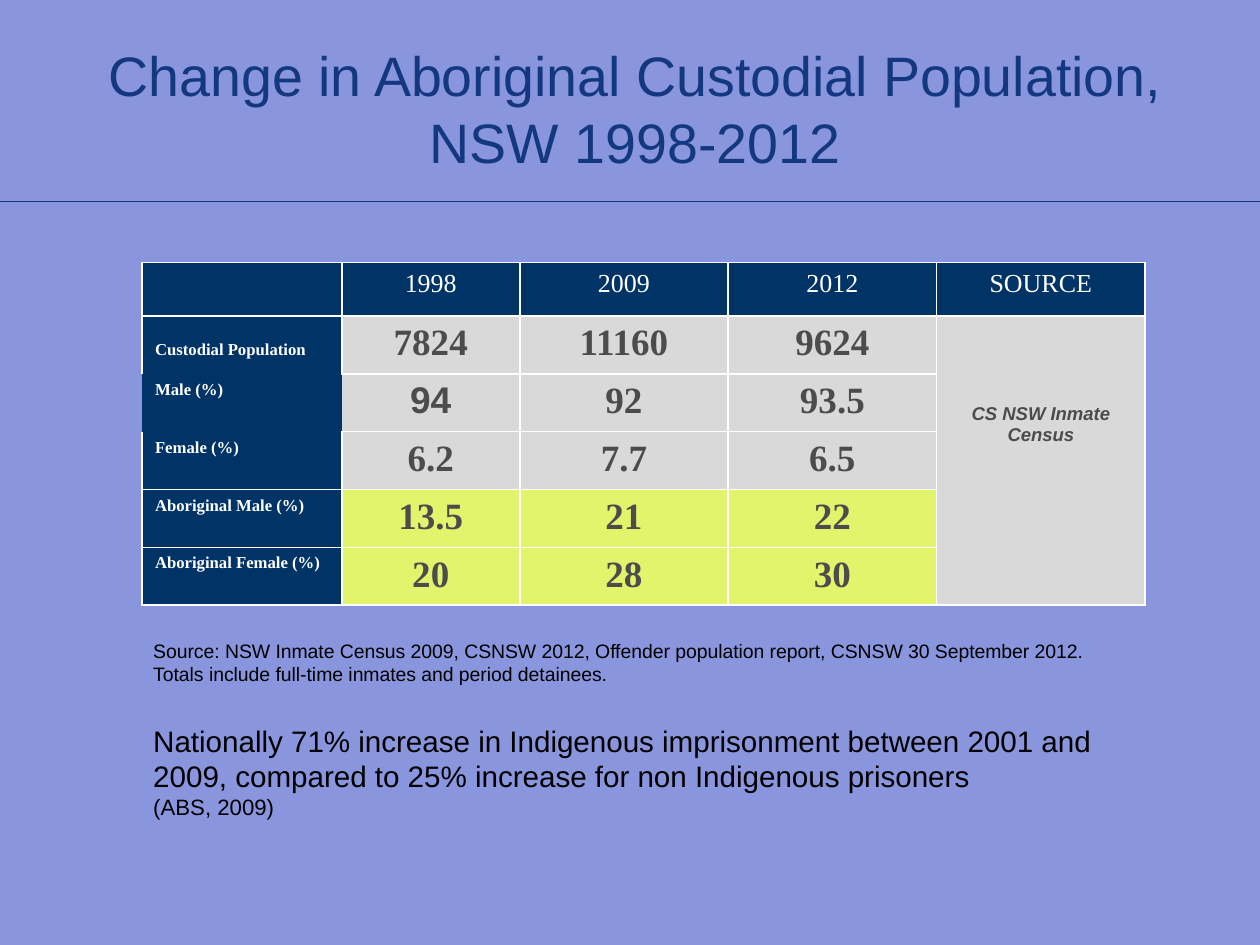
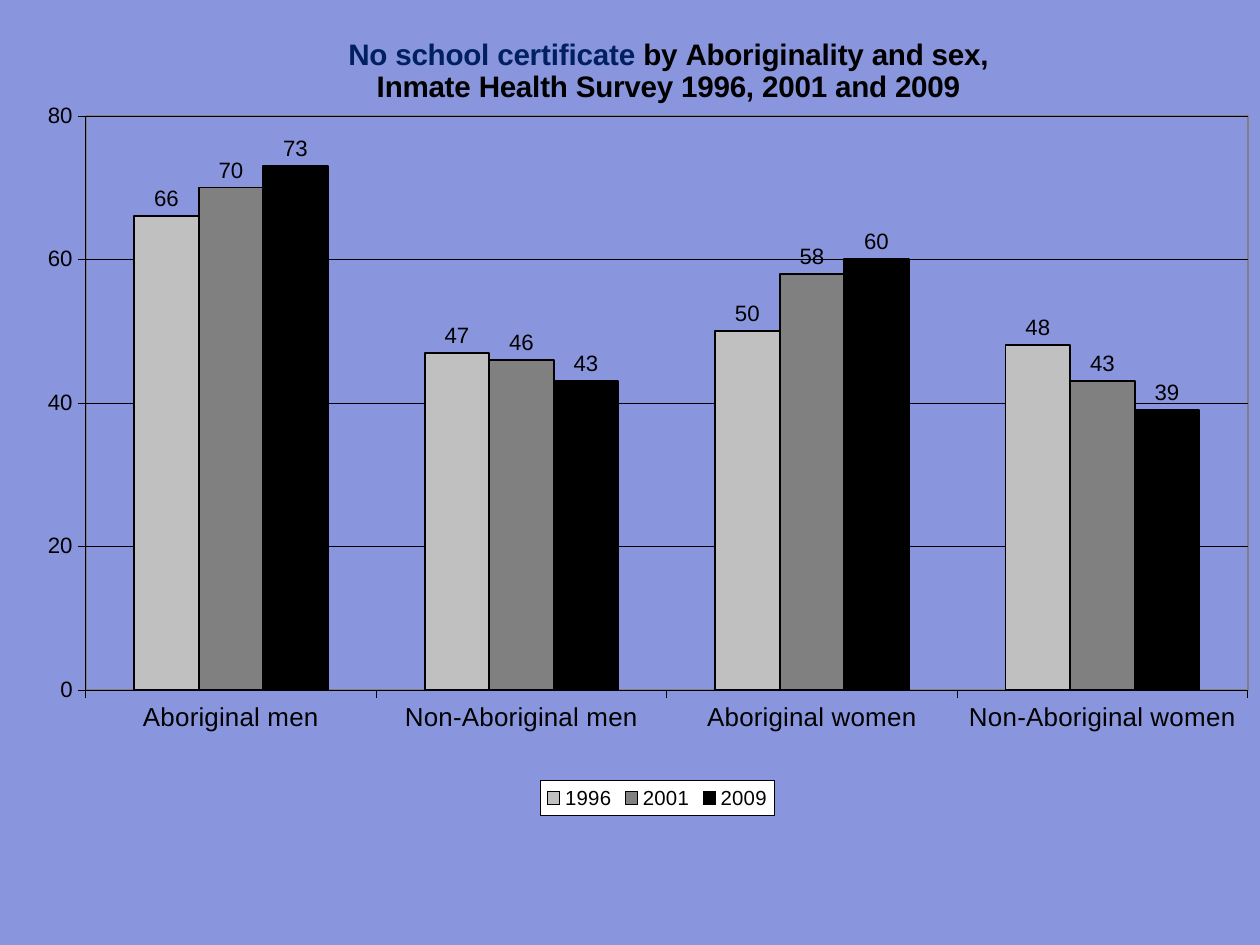
"""Build two slides on Aboriginal custody and schooling figures in NSW."""
from dataclasses import dataclass

from lxml.etree import SubElement
from pptx import Presentation
from pptx.chart.data import CategoryChartData
from pptx.dml.color import RGBColor
from pptx.enum.chart import XL_CHART_TYPE as ChartType
from pptx.enum.chart import XL_LABEL_POSITION as LabelPosition
from pptx.enum.chart import XL_LEGEND_POSITION as LegendPosition
from pptx.enum.chart import XL_TICK_MARK as TickMark
from pptx.enum.shapes import MSO_CONNECTOR as Connector
from pptx.enum.text import MSO_ANCHOR as Anchor
from pptx.enum.text import PP_ALIGN as Align
from pptx.oxml import parse_xml
from pptx.oxml.ns import nsdecls, qn
from pptx.util import Cm, Pt


@dataclass(frozen=True)
class Theme:
    """Colours, fonts and type sizes of the deck."""
    background: RGBColor = RGBColor(0x89, 0x96, 0xDE)
    title: RGBColor = RGBColor(0x13, 0x38, 0x80)
    accent: RGBColor = RGBColor(0x00, 0x20, 0x60)
    header: RGBColor = RGBColor(0x00, 0x33, 0x66)
    cell: RGBColor = RGBColor(0xD9, 0xD9, 0xD9)
    highlight: RGBColor = RGBColor(0xE1, 0xF4, 0x6C)
    figure: RGBColor = RGBColor(0x4C, 0x4C, 0x4C)
    silver: RGBColor = RGBColor(0xC0, 0xC0, 0xC0)
    grey: RGBColor = RGBColor(0x80, 0x80, 0x80)
    black: RGBColor = RGBColor(0, 0, 0)
    white: RGBColor = RGBColor(0xFF, 0xFF, 0xFF)
    sans: str = "Arial"
    serif: str = "Times New Roman"
    title_size: float = 30
    figure_size: float = 20
    lead_size: float = 16
    head_size: float = 14
    chart_size: float = 12
    legend_size: float = 11
    note_size: float = 10.5
    source_size: float = 10
    label_size: float = 9


class SlideBuilder:
    """Hold the theme and the current slide."""

    def __init__(self, deck, theme):
        """Paint the shared background on the master."""
        self.deck = deck
        self.theme = theme
        self.page = None
        fill = deck.slide_master.background.fill
        fill.solid()
        fill.fore_color.rgb = theme.background

    def new_page(self):
        """Start a blank slide."""
        self.page = self.deck.slides.add_slide(self.deck.slide_layouts[6])

    def style(self, font, size, color, name=None, bold=False, italic=False):
        """Set every property of a font."""
        font.name = name or self.theme.sans
        font.size = Pt(size)
        font.color.rgb = color
        font.bold = bold
        font.italic = italic

    def span(self, para, text, size, color, **look):
        """Add one styled run."""
        span = para.add_run()
        span.text = text
        self.style(span.font, size, color, **look)

    def text(self, place, lines, color, align=Align.LEFT, anchor=Anchor.TOP):
        """Add a text box from (text, size) lines."""
        frame = self.page.shapes.add_textbox(*map(Cm, place)).text_frame
        frame.word_wrap = True
        frame.vertical_anchor = anchor
        for index, (words, size) in enumerate(lines):
            para = frame.add_paragraph() if index else frame.paragraphs[0]
            para.alignment = align
            self.span(para, words, size, color)

    def rule(self, top):
        """Draw a thin line across the slide."""
        line = self.page.shapes.add_connector(
            Connector.STRAIGHT, 0, Cm(top), self.deck.slide_width, Cm(top))
        line.line.color.rgb = self.theme.title
        line.line.width = Pt(0.75)
        SubElement(line.element.xpath("p:spPr")[0], qn("a:effectLst"))

    def table(self, left, top, widths, heights):
        """Add a plain table of the given column and row sizes."""
        table = self.page.shapes.add_table(
            len(heights), len(widths), Cm(left), Cm(top),
            Cm(sum(widths)), Cm(sum(heights))).table
        table.first_row = table.horz_banding = False
        for column, width in zip(table.columns, widths):
            column.width = Cm(width)
        for row, height in zip(table.rows, heights):
            row.height = Cm(height)
        return table

    def cell(self, cell, text, fill, size, color, align=Align.CENTER,
             sides="LRTB", **look):
        """Fill one cell and edge the named sides in white."""
        cell.fill.solid()
        cell.fill.fore_color.rgb = fill
        para = cell.text_frame.paragraphs[0]
        para.alignment = align
        self.span(para, text, size, color, **look)
        properties = cell._tc.get_or_add_tcPr()
        for index, side in enumerate("LRTB"):
            paint = "<a:noFill/>"
            if side in sides:
                paint = (f'<a:solidFill><a:srgbClr val="{self.theme.white}"/>'
                         "</a:solidFill>")
            properties.insert(index, parse_xml(
                f'<a:ln{side} {nsdecls("a")} w="12700">{paint}</a:ln{side}>'))

    def layout(self, part, index, **values):
        """Give a chart part a manual position."""
        for old in part.findall(qn("c:layout")):
            part.remove(old)
        layout = parse_xml(f'<c:layout {nsdecls("c")}/>')
        manual = SubElement(layout, qn("c:manualLayout"))
        for key, value in values.items():
            SubElement(manual, qn(f"c:{key}")).set("val", str(value))
        part.insert(index, layout)

    def outline(self, color, width, fill="<a:noFill/>"):
        """Return shape properties for a chart part."""
        return parse_xml(
            f'<c:spPr {nsdecls("c", "a")}>{fill}<a:ln w="{Pt(width)}">'
            f'<a:solidFill><a:srgbClr val="{color}"/></a:solidFill>'
            "</a:ln></c:spPr>")

    def hairline(self, line):
        """Make a chart line thin and black."""
        line.color.rgb = self.theme.black
        line.width = Pt(0.25)

    def columns(self, place, categories, series, title):
        """Add a clustered column chart."""
        theme = self.theme
        data = CategoryChartData()
        data.categories = categories
        for name, values, _ in series:
            data.add_series(name, values)
        chart = self.page.shapes.add_chart(
            ChartType.COLUMN_CLUSTERED, *map(Cm, place), data).chart
        self.style(chart.font, theme.chart_size, theme.black)
        self.plot(chart, series)
        self.axes(chart)
        self.chart_title(chart, title)
        self.legend(chart)

    def plot(self, chart, series):
        """Colour the columns and label their values."""
        theme = self.theme
        plot = chart.plots[0]
        plot.gap_width = 150
        plot.overlap = 0
        plot.vary_by_categories = False
        plot.has_data_labels = True
        labels = plot.data_labels
        labels.show_value = True
        labels.position = LabelPosition.OUTSIDE_END
        self.style(labels.font, theme.chart_size, theme.black)
        for bars, (_, _, color) in zip(plot.series, series):
            bars.invert_if_negative = False
            bars.format.fill.solid()
            bars.format.fill.fore_color.rgb = color
            bars.format.line.color.rgb = theme.black
            bars.format.line.width = Pt(1)
        area = chart.element.xpath(".//c:plotArea")[0]
        self.layout(area, 0, layoutTarget="inner", xMode="edge", yMode="edge",
                    x=0.043, y=0.142, w=0.93, h=0.704)
        area.append(self.outline(theme.grey, 1))

    def axes(self, chart):
        """Style both axes and the gridlines."""
        theme = self.theme
        values = chart.value_axis
        values.minimum_scale, values.maximum_scale = 0, 80
        values.major_unit = 20
        values.has_major_gridlines = True
        self.hairline(values.major_gridlines.format.line)
        for axis, size in ((chart.category_axis, theme.head_size),
                           (values, theme.chart_size)):
            axis.major_tick_mark = TickMark.OUTSIDE
            axis.minor_tick_mark = TickMark.NONE
            self.hairline(axis.format.line)
            self.style(axis.tick_labels.font, size, theme.black)

    def chart_title(self, chart, lines):
        """Write the chart title from lines of (text, colour) runs."""
        chart.has_title = True
        frame = chart.chart_title.text_frame
        for index, line in enumerate(lines):
            para = frame.add_paragraph() if index else frame.paragraphs[0]
            para.alignment = Align.CENTER
            for words, color in line:
                self.span(para, words, self.theme.lead_size, color, bold=True)
        self.layout(chart.element.xpath("./c:chart/c:title")[0], 1,
                    xMode="edge", yMode="edge", x=0.25, y=0.04)

    def legend(self, chart):
        """Add a white legend box under the plot."""
        theme = self.theme
        chart.has_legend = True
        chart.legend.position = LegendPosition.BOTTOM
        chart.legend.include_in_layout = False
        self.style(chart.legend.font, theme.legend_size, theme.black)
        legend = chart.element.xpath(".//c:legend")[0]
        self.layout(legend, 1, xMode="edge", yMode="edge",
                    x=0.407, y=0.957, w=0.187, h=0.043)
        white = (f'<a:solidFill><a:srgbClr val="{theme.white}"/>'
                 "</a:solidFill>")
        legend.find(qn("c:txPr")).addprevious(
            self.outline(theme.black, 0.25, white))


def custody_slide(builder):
    """Build the custodial population table."""
    theme = builder.theme
    builder.new_page()
    builder.text((1.6, 0.25, 21, 3.2),
                 [("Change in Aboriginal Custodial Population, NSW 1998-2012",
                   theme.title_size)],
                 theme.title, Align.CENTER, Anchor.BOTTOM)
    builder.rule(3.84)
    table = builder.table(2.7, 5, [3.81, 3.39] + [3.97] * 3, [1] + [1.1] * 5)
    for column, words in enumerate(("", "1998", "2009", "2012", "SOURCE")):
        builder.cell(table.cell(0, column), words, theme.header,
                     theme.head_size, theme.white, name=theme.serif)
    rows = (
        ("Custodial Population", ("7824", "11160", "9624"), theme.cell, "LRT"),
        ("Male (%)", ("94", "92", "93.5"), theme.cell, ""),
        ("Female (%)", ("6.2", "7.7", "6.5"), theme.cell, "LRB"),
        ("Aboriginal Male (%)", ("13.5", "21", "22"), theme.highlight, "LRTB"),
        ("Aboriginal Female (%)", ("20", "28", "30"), theme.highlight, "LRTB"),
    )
    for row, (label, figures, fill, sides) in enumerate(rows, 1):
        builder.cell(table.cell(row, 0), label, theme.header, theme.label_size,
                     theme.white, Align.LEFT, sides, name=theme.serif,
                     bold=True)
        for column, figure in enumerate(figures, 1):
            odd = figure == "94"
            builder.cell(table.cell(row, column), figure, fill,
                         theme.figure_size, theme.figure,
                         sides="RTB" if odd else "LRTB",
                         name=theme.sans if odd else theme.serif, bold=True)
    table.cell(1, 0).margin_top = Cm(0.47)
    source = table.cell(1, 4)
    source.merge(table.cell(5, 4))
    source.margin_top = Cm(1.68)
    builder.cell(source, "CS NSW Inmate Census", theme.cell, theme.source_size,
                 theme.figure, bold=True, italic=True)
    builder.text((2.67, 12.04, 19.1, 1.14),
                 [("Source: NSW Inmate Census 2009, CSNSW 2012, Offender "
                   "population report, CSNSW 30 September 2012. Totals include "
                   "full-time inmates and period detainees.",
                   theme.note_size)], theme.black)
    builder.text((2.67, 13.64, 19.1, 2.13),
                 [("Nationally 71% increase in Indigenous imprisonment between "
                   "2001 and 2009, compared to 25% increase for non Indigenous "
                   "prisoners", theme.lead_size),
                  ("(ABS, 2009)", theme.chart_size)], theme.black)


def schooling_slide(builder):
    """Build the school certificate chart."""
    theme = builder.theme
    builder.new_page()
    builder.columns(
        (0.61, 0, 23.8, 15.54),
        ("Aboriginal men", "Non-Aboriginal men",
         "Aboriginal women", "Non-Aboriginal women"),
        (("1996", (66, 47, 50, 48), theme.silver),
         ("2001", (70, 46, 58, 43), theme.grey),
         ("2009", (73, 43, 60, 39), theme.black)),
        ((("No school certificate", theme.accent),
          (" by Aboriginality and sex,", theme.black)),
         (("Inmate Health Survey 1996, 2001 and 2009", theme.black),)))


def main():
    """Build and save the deck."""
    deck = Presentation()
    deck.slide_width, deck.slide_height = Cm(24), Cm(18)
    builder = SlideBuilder(deck, Theme())
    custody_slide(builder)
    schooling_slide(builder)
    deck.save("out.pptx")


if __name__ == "__main__":
    main()
